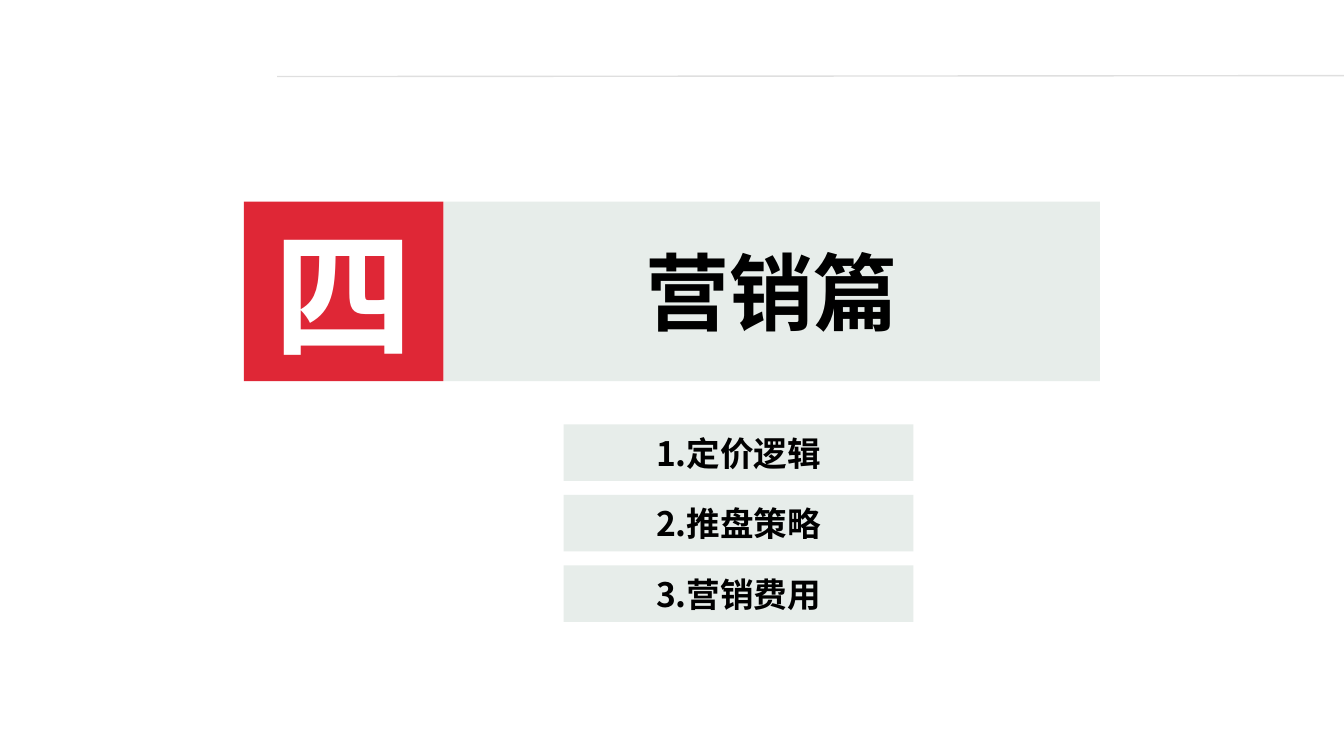
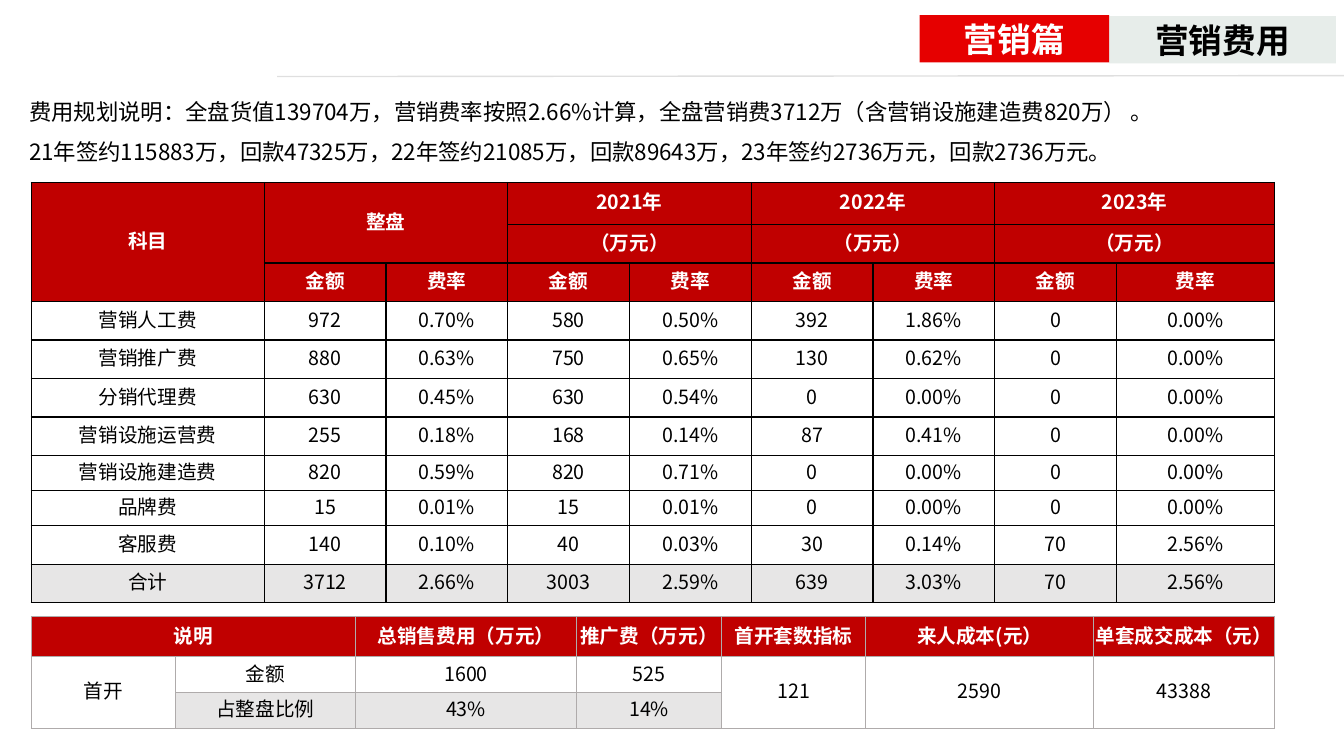
"""Build a section opener and a marketing cost slide."""
from lxml.etree import SubElement
from pptx import Presentation
from pptx.dml.color import RGBColor
from pptx.enum.shapes import MSO_CONNECTOR, MSO_SHAPE
from pptx.enum.text import MSO_ANCHOR, PP_ALIGN
from pptx.oxml import parse_xml
from pptx.oxml.ns import nsdecls, qn
from pptx.util import Inches, Pt

FONT = "Noto Sans CJK SC"
COLORS = {
    "black": "000000",
    "white": "FFFFFF",
    "pale": "E7EDEA",
    "crimson": "DF2736",
    "red": "E60000",
    "header": "C00000",
    "total": "E7E6E6",
    "grid": "AFABAB",
    "rule": "C0C0C0",
}
CELL_MARGINS = {
    "margin_left": Inches(0.01),
    "margin_top": Inches(0.01),
    "margin_right": Inches(0.01),
    "margin_bottom": Inches(0.05),
    "vertical_anchor": MSO_ANCHOR.MIDDLE,
}
BAND_FRAME = {
    "margin_top": 0,
    "margin_bottom": 0,
    "vertical_anchor": MSO_ANCHOR.MIDDLE,
    "word_wrap": True,
}

presentation = Presentation()
presentation.slide_width = Inches(13.33)
presentation.slide_height = Inches(7.5)
COLUMN = presentation.slide_width / 100
ROW = presentation.slide_height / 100


def write_text(frame, lines, size, color, bold=False, **paragraph_format):
    """Write each line as one styled paragraph."""
    for index, line in enumerate(lines):
        paragraph = frame.add_paragraph() if index else frame.paragraphs[0]
        for name, value in paragraph_format.items():
            setattr(paragraph, name, value)
        run = paragraph.add_run()
        run.text = line
        for name, value in {"name": FONT, "size": Pt(size), "bold": bold}.items():
            setattr(run.font, name, value)
        run.font.color.rgb = RGBColor.from_string(COLORS[color])
        SubElement(run._r.get_or_add_rPr(), qn("a:ea"), typeface=FONT)


def add_grid(slide, top, widths, heights, values, header_rows, merges, border, weight):
    """Add a bordered table with a header and a shaded last row."""
    table = slide.shapes.add_table(
        len(heights), len(widths), int(2.33 * COLUMN), int(top * ROW),
        int(sum(widths) * COLUMN), int(sum(heights) * ROW),
    ).table
    table.first_row = table.horz_banding = False
    for column, width in zip(table.columns, widths):
        column.width = int(width * COLUMN)
    for row, height in zip(table.rows, heights):
        row.height = int(height * ROW)
    for row_index, row_values in enumerate(values):
        is_header = row_index < header_rows
        is_total = row_index == len(values) - 1
        fill = "header" if is_header else "total" if is_total else "white"
        for column_index, value in enumerate(row_values):
            cell = table.cell(row_index, column_index)
            for name, setting in CELL_MARGINS.items():
                setattr(cell, name, setting)
            write_text(cell.text_frame, [value], 14, "white" if is_header else "black",
                       is_header, alignment=PP_ALIGN.CENTER)
            properties = cell._tc.get_or_add_tcPr()
            for side in ("lnL", "lnR", "lnT", "lnB"):
                properties.append(parse_xml(
                    f'<a:{side} {nsdecls("a")} w="{Pt(weight)}"><a:solidFill>'
                    f'<a:srgbClr val="{COLORS[border]}"/></a:solidFill></a:{side}>'
                ))
            cell.fill.solid()
            cell.fill.fore_color.rgb = RGBColor.from_string(COLORS[fill])
    for first_row, first_column, last_row, last_column in merges:
        table.cell(first_row, first_column).merge(table.cell(last_row, last_column))


opener, costs = [
    presentation.slides.add_slide(presentation.slide_layouts[6]) for _ in range(2)
]

for slide in (opener, costs):
    rule = slide.shapes.add_connector(
        MSO_CONNECTOR.STRAIGHT, int(20.63 * COLUMN), int(10.13 * ROW),
        presentation.slide_width, int(10 * ROW),
    )
    rule.line.width = Pt(1)
    rule.line.color.rgb = RGBColor.from_string(COLORS["rule"])
    rule_color = rule.line._ln.find(qn("a:solidFill")).find(qn("a:srgbClr"))
    SubElement(rule_color, qn("a:alpha"), val="50000")
    SubElement(rule._element.spPr, qn("a:effectLst"))

bands = [
    (opener, 33, 26.67, 48.83, 23.73, "pale", "营销篇", 60, "black"),
    (opener, 18.15, 26.67, 14.85, 23.73, "crimson", "四", 100, "white"),
    (costs, 82.52, 2.13, 16.88, 6.27, "pale", "营销费用", 24, "black"),
    (costs, 68.42, 2, 14.1, 6.27, "red", "营销篇", 24, "white"),
]
for index, topic in enumerate(["1.定价逻辑", "2.推盘策略", "3.营销费用"]):
    top = 56.13 + index * 9.33
    bands.append((opener, 41.94, top, 26.03, 7.47, "pale", topic, 24, "black"))

for slide, left, top, width, height, fill, text, size, color in bands:
    shape = slide.shapes.add_shape(
        MSO_SHAPE.RECTANGLE, int(left * COLUMN), int(top * ROW),
        int(width * COLUMN), int(height * ROW),
    )
    shape.shadow.inherit = False
    shape.fill.solid()
    shape.fill.fore_color.rgb = RGBColor.from_string(COLORS[fill])
    shape.line.fill.background()
    for name, value in BAND_FRAME.items():
        setattr(shape.text_frame, name, value)
    write_text(shape.text_frame, [text], size, color, True, alignment=PP_ALIGN.CENTER)

summary = costs.shapes.add_textbox(
    int(1.43 * COLUMN), int(10.53 * ROW), int(97.22 * COLUMN), int(11.6 * ROW)
)
summary.text_frame.word_wrap = True
write_text(summary.text_frame, [
    "费用规划说明：全盘货值139704万，营销费率按照2.66%计算，全盘营销费3712万（含营销设施建造费820万） 。",
    "21年签约115883万，回款47325万，22年签约21085万，回款89643万，23年签约2736万元，回款2736万元。",
], 16, "black", line_spacing=1.5)

first_sale_values = [
    ["说明", "", "总销售费用（万元）", "推广费（万元）", "首开套数指标", "来人成本(元）", "单套成交成本（元）"],
    ["首开", "金额", "1600", "525", "121", "2590", "43388"],
    ["", "占整盘比例", "43%", "14%", "", "", ""],
]
add_grid(
    costs, 81.6, [10.75, 13.35, 16.5, 10.75, 10.75, 16.95, 13.45], [5.25, 4.73, 4.73],
    first_sale_values, 1,
    [(0, 0, 0, 1)] + [(1, column, 2, column) for column in (0, 4, 5, 6)],
    "grid", 0.75,
)

budget_values = [
    ["科目", "整盘", "", "2021年", "", "2022年", "", "2023年", ""],
    ["", "", ""] + ["（万元）", ""] * 3,
    [""] + ["金额", "费率"] * 4,
    ["营销人工费", "972", "0.70%", "580", "0.50%", "392", "1.86%", "0", "0.00%"],
    ["营销推广费", "880", "0.63%", "750", "0.65%", "130", "0.62%", "0", "0.00%"],
    ["分销代理费", "630", "0.45%", "630", "0.54%", "0", "0.00%", "0", "0.00%"],
    ["营销设施运营费", "255", "0.18%", "168", "0.14%", "87", "0.41%", "0", "0.00%"],
    ["营销设施建造费", "820", "0.59%", "820", "0.71%", "0", "0.00%", "0", "0.00%"],
    ["品牌费", "15", "0.01%", "15", "0.01%", "0", "0.00%", "0", "0.00%"],
    ["客服费", "140", "0.10%", "40", "0.03%", "30", "0.14%", "70", "2.56%"],
    ["合计", "3712", "2.66%", "3003", "2.59%", "639", "3.03%", "70", "2.56%"],
]
year_merges = [(row, column, row, column + 1) for row in (0, 1) for column in (3, 5, 7)]
add_grid(
    costs, 24.13, [17.33] + [9.06] * 7 + [11.75],
    [5.55] + [5.1] * 6 + [4.63] * 2 + [5.1] * 2,
    budget_values, 3, [(0, 0, 2, 0), (0, 1, 1, 2)] + year_merges, "black", 1,
)

presentation.save("out.pptx")
